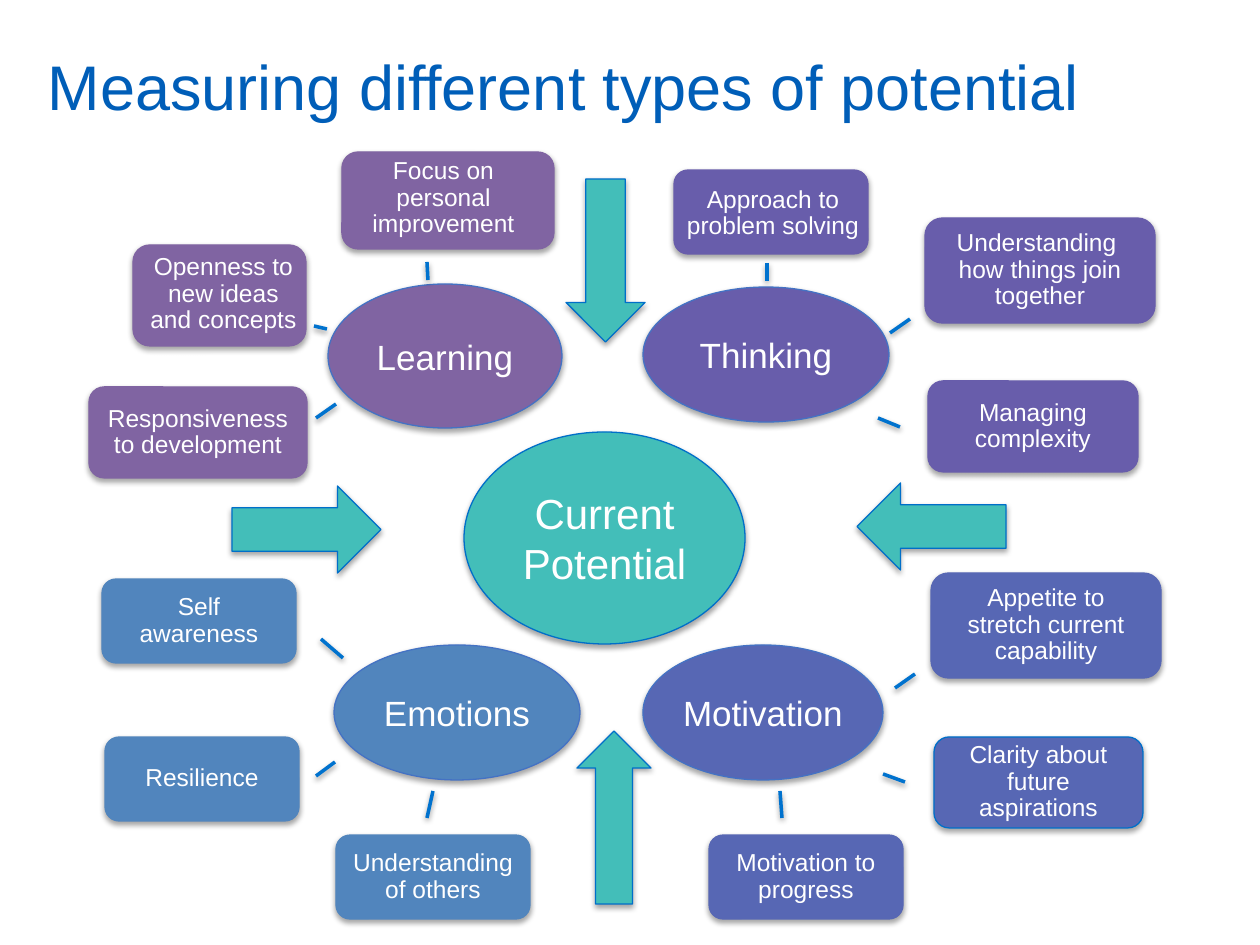
from pptx import Presentation
from pptx.dml.color import RGBColor
from pptx.enum.shapes import MSO_CONNECTOR, MSO_SHAPE
from pptx.enum.text import MSO_ANCHOR, PP_ALIGN
from pptx.oxml import parse_xml
from pptx.oxml.ns import nsdecls
from pptx.util import Pt

OVAL, ROUND, ARROW = MSO_SHAPE.OVAL, MSO_SHAPE.ROUNDED_RECTANGLE, MSO_SHAPE.DOWN_ARROW
LINE = MSO_CONNECTOR.STRAIGHT
MID, LEFT, MIDDLE = PP_ALIGN.CENTER, PP_ALIGN.LEFT, MSO_ANCHOR.MIDDLE

WHITE = RGBColor(0xFF, 0xFF, 0xFF)
NAVY = RGBColor(0x00, 0x5E, 0xB8)
EDGE = RGBColor(0x00, 0x6F, 0xC9)
RIM = RGBColor(0x44, 0x72, 0xC4)
LINK = RGBColor(0x00, 0x72, 0xCE)
TEAL = RGBColor(0x43, 0xBE, 0xB9)
PLUM = RGBColor(0x80, 0x64, 0xA2)
VIOLET = RGBColor(0x68, 0x5D, 0xAB)
INDIGO = RGBColor(0x57, 0x67, 0xB4)
BLUE = RGBColor(0x51, 0x85, 0xBD)

SCALE = 914400 / 126

TOPICS = [
    ("Learning", PLUM, (328, 284, 234, 144), [
        ("Responsiveness to development", (89, 387, 218, 91), PLUM)]),
    ("Thinking", VIOLET, (643, 287, 246, 135), [
        ("Managing complexity", (928, 381, 210, 91), VIOLET),
        ("Understanding  how things join together", (925, 218, 230, 105), VIOLET)]),
    ("Emotions", BLUE, (334, 645, 246, 135), [
        ("Self awareness", (102, 579, 194, 84), BLUE),
        ("Resilience", (105, 737, 194, 84), BLUE),
        ("Understanding of others", (336, 835, 194, 84), BLUE)]),
    ("Motivation", INDIGO, (643, 645, 240, 135), [
        ("Clarity about future aspirations", (934, 737, 209, 91), EDGE),
        ("Appetite to stretch current capability", (931, 573, 230, 105), INDIGO),
        ("Motivation to progress", (709, 835, 194, 84), INDIGO)]),
]
NOTES = [
    ("Focus on personal improvement", PLUM, (342, 152, 212, 97), (334, 152, 219, 93)),
    ("Openness to new ideas and concepts", PLUM, (133, 245, 173, 101), (134, 248, 179, 93)),
    ("Approach to problem solving", VIOLET, (674, 170, 194, 84), (668, 180, 210, 67)),
]
ARROWS = [
    ((566, 179, 79, 163), 0),
    ((263, 455, 87, 149), 270),
    ((888, 452, 87, 149), 90),
    ((577, 731, 74, 173), 180),
]
LINKS = [
    (314, 326, 327, 329), (427, 262, 428, 280), (336, 404, 316, 418),
    (910, 319, 890, 333), (900, 427, 878, 418), (767, 263, 767, 281),
    (915, 674, 895, 688), (905, 782, 883, 774), (780, 791, 782, 818),
    (335, 762, 316, 776), (343, 658, 321, 639), (433, 791, 427, 818),
]


def emu(*sizes):
    """Turn px lengths into EMU."""
    return [round(size * SCALE) for size in sizes]


def assign(item, values):
    """Set each named value on an item."""
    for name, value in values.items():
        setattr(item, name, value)


class Deck:
    """Holds the style and the current slide."""

    font = "Arial"
    frame = {"word_wrap": True, "vertical_anchor": MIDDLE}
    label = {"alignment": MID, "line_spacing": 0.9}

    def __init__(self, show):
        """Add a title-only slide."""
        self.slide = show.slides.add_slide(show.slide_layouts[5])
        self.shapes = self.slide.shapes

    def letter(self, shape, text, size, color=WHITE, para=None, frame=None):
        """Put styled text in a shape."""
        body = shape.text_frame
        body.text = text
        assign(body, self.frame | (frame or {}))
        line = body.paragraphs[0]
        assign(line, para or {"alignment": MID})
        font = line.runs[0].font
        assign(font, {"name": self.font, "size": Pt(size)})
        font.color.rgb = color

    def shade(self, shape, alpha, drop):
        """Give a shape a soft shadow below it."""
        shape._element.spPr.append(parse_xml(
            f'<a:effectLst {nsdecls("a")}><a:outerShdw blurRad="40000" dist="{drop}" '
            'dir="5400000" rotWithShape="0"><a:srgbClr val="000000">'
            f'<a:alpha val="{alpha}000"/></a:srgbClr></a:outerShdw></a:effectLst>'))

    def title(self, text, place):
        """Place and format the title."""
        head = self.shapes.title
        assign(head, dict(zip(("left", "top", "width", "height"), emu(*place))))
        self.letter(head, text, 36, NAVY, {"alignment": LEFT})

    def block(self, kind, place, fill, edge, turn=0):
        """Draw a filled shape with a shadow."""
        shape = self.shapes.add_shape(kind, *emu(*place))
        shape.rotation = turn
        shape.fill.solid()
        shape.fill.fore_color.rgb = fill
        shape.line.color.rgb = edge
        shape.line.width = Pt(0.75)
        self.shade(shape, 35, 23000)
        return shape

    def oval(self, text, place, fill, edge, size):
        """Draw a labelled oval."""
        shape = self.block(OVAL, place, fill, edge)
        self.letter(shape, text, size, frame={"margin_left": 0, "margin_right": 0})

    def box(self, text, place, fill, edge):
        """Draw a labelled rounded box."""
        self.letter(self.block(ROUND, place, fill, edge), text, 14, para=self.label)

    def note(self, text, place):
        """Add a free label."""
        self.letter(self.shapes.add_textbox(*emu(*place)), text, 14, para=self.label)

    def link(self, ends):
        """Draw a short link line."""
        line = self.shapes.add_connector(LINE, *emu(*ends))
        line.line.color.rgb = LINK
        line.line.width = Pt(2)
        self.shade(line, 38, 20000)


def main():
    """Build the slide."""
    show = Presentation()
    assign(show, dict(zip(("slide_width", "slide_height"), emu(1260, 945))))
    deck = Deck(show)
    deck.title("Measuring different types of potential", (35, 26, 1181, 118))
    deck.oval("Current Potential", (464, 432, 281, 212), TEAL, EDGE, 24)
    for place, turn in ARROWS:
        deck.block(ARROW, place, TEAL, EDGE, turn)
    for text, fill, place, area in NOTES:
        deck.block(ROUND, place, fill, fill)
        deck.note(text, area)
    for name, fill, place, boxes in TOPICS:
        deck.oval(name, place, fill, RIM, 20)
        for text, spot, edge in boxes:
            deck.box(text, spot, fill, edge)
    for ends in LINKS:
        deck.link(ends)
    show.save("out.pptx")


if __name__ == "__main__":
    main()
